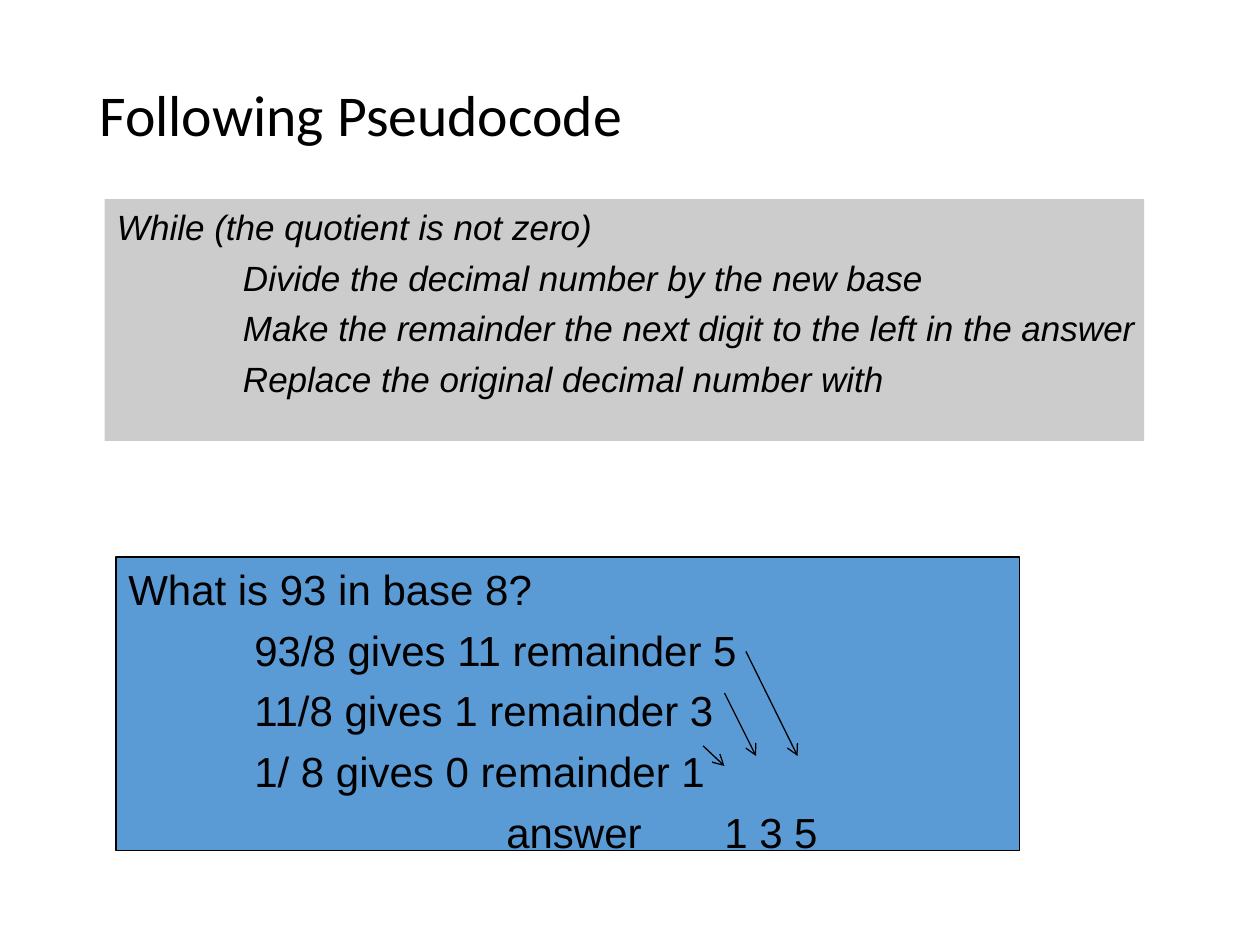
from lxml import etree
from pptx import Presentation
from pptx.dml.color import RGBColor
from pptx.enum.shapes import MSO_CONNECTOR as CONN, MSO_SHAPE as SHAPE
from pptx.enum.text import MSO_ANCHOR as ANCHOR, PP_ALIGN as ALIGN
from pptx.oxml.ns import qn
from pptx.util import Inches, Pt


def rgb(value):
    return RGBColor.from_string(value)


prs = Presentation()
prs.slide_width, prs.slide_height = Inches(10), Inches(7.5)
s = prs.slides.add_slide(prs.slide_layouts[6])

# Title
tf = s.shapes.add_textbox(*map(Inches, (0.69, 0.4, 8.62, 1.07))).text_frame
tf.word_wrap = True
tf.vertical_anchor = ANCHOR.MIDDLE
tf.text = "Following Pseudocode"
p = tf.paragraphs[0]
p.line_spacing = 0.9
p.font.name, p.font.size, p.font.color.rgb = "Calibri", Pt(33), rgb("000000")

# Pseudocode and worked example: place, fill, line, size, italic, text
panels = [
    ((0.83, 1.58, 8.25, 1.92), "CCCCCC", None, 20, True, [
        "While (the quotient is not zero)",
        "\tDivide the decimal number by the new base",
        "\tMake the remainder the next digit to the left in the answer",
        "\tReplace the original decimal number with"]),
    ((0.92, 4.42, 7.17, 2.33), "5B9BD5", "000000", 24, False, [
        "What is 93 in base 8?",
        "\t93/8 gives 11 remainder 5",
        "\t11/8 gives 1 remainder 3",
        "\t1/ 8 gives 0 remainder 1",
        "\t\tanswer\t1 3 5"]),
]
TAB_STOPS = (1, 3, 4.73)

for place, fill, line, size, italic, lines in panels:
    sp = s.shapes.add_shape(SHAPE.RECTANGLE, *map(Inches, place))
    sp.shadow.inherit = False
    sp.fill.solid()
    sp.fill.fore_color.rgb = rgb(fill)
    if line:
        sp.line.color.rgb = rgb(line)
        sp.line.width = Pt(0.75)
    else:
        sp.line.fill.background()
    tf = sp.text_frame
    tf.word_wrap = True
    tf.margin_right = 0
    tf.vertical_anchor = ANCHOR.TOP
    tf.text = "\n".join(lines)
    for i, p in enumerate(tf.paragraphs):
        p.alignment = ALIGN.LEFT
        if i:
            p.space_before = Pt(size / 4)
        tabs = etree.SubElement(p._p.get_or_add_pPr(), qn("a:tabLst"))
        for stop in TAB_STOPS:
            etree.SubElement(tabs, qn("a:tab"), pos=str(Inches(stop)), algn="l")
        for r in p.runs:
            r.font.name, r.font.size = "Arial", Pt(size)
            r.font.italic = italic
            r.font.color.rgb = rgb("000000")

# Arrows from each remainder to its digit in the answer
for ends in [(5.58, 5.92, 5.75, 6.08), (5.75, 5.5, 6, 6), (5.92, 5.17, 6.33, 6)]:
    arrow = s.shapes.add_connector(CONN.STRAIGHT, *map(Inches, ends))
    arrow.line.color.rgb = rgb("000000")
    arrow.line.width = Pt(0.75)
    etree.SubElement(arrow.line._get_or_add_ln(), qn("a:tailEnd"), type="arrow")
    etree.SubElement(arrow._element.spPr, qn("a:effectLst"))

prs.save("out.pptx")
